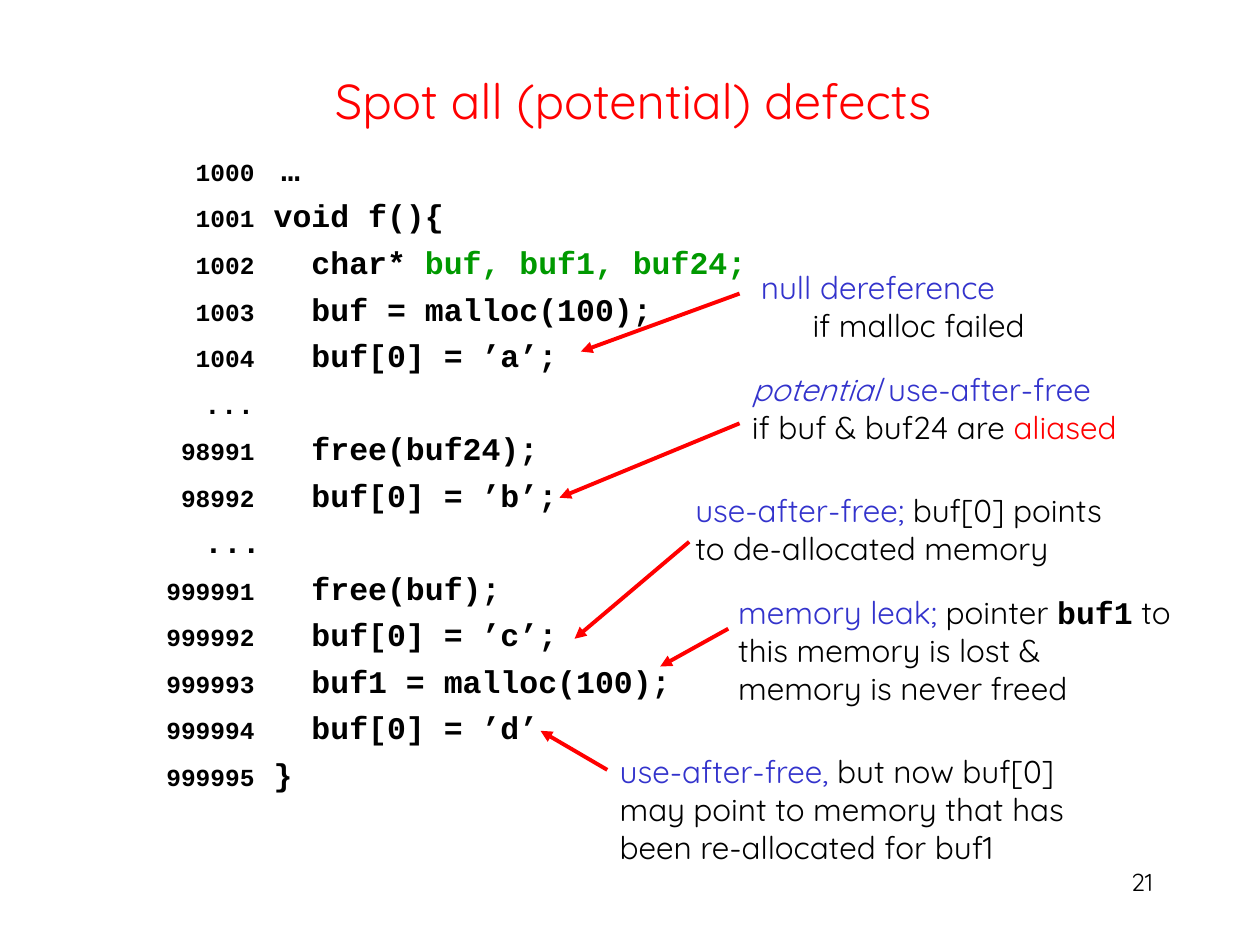
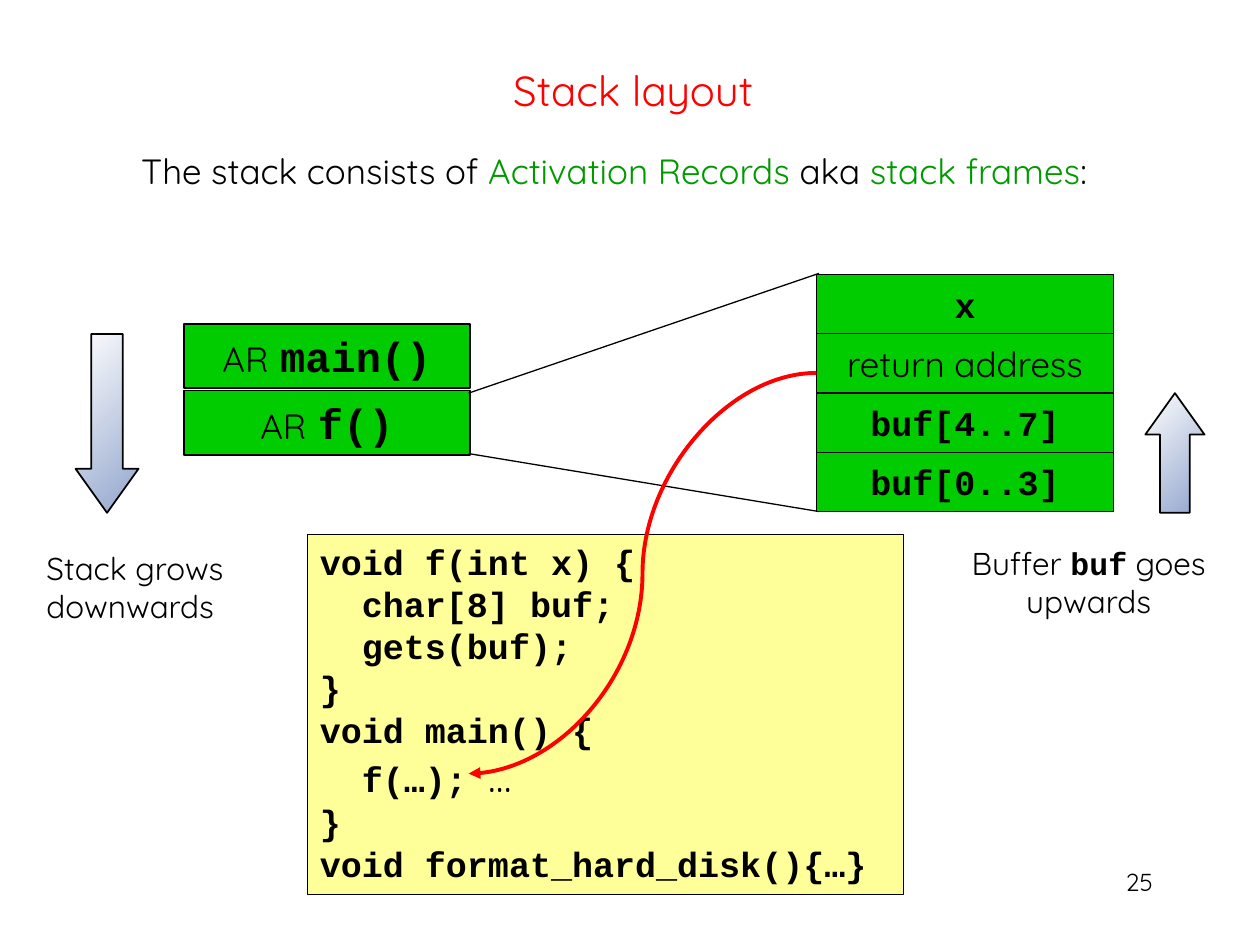
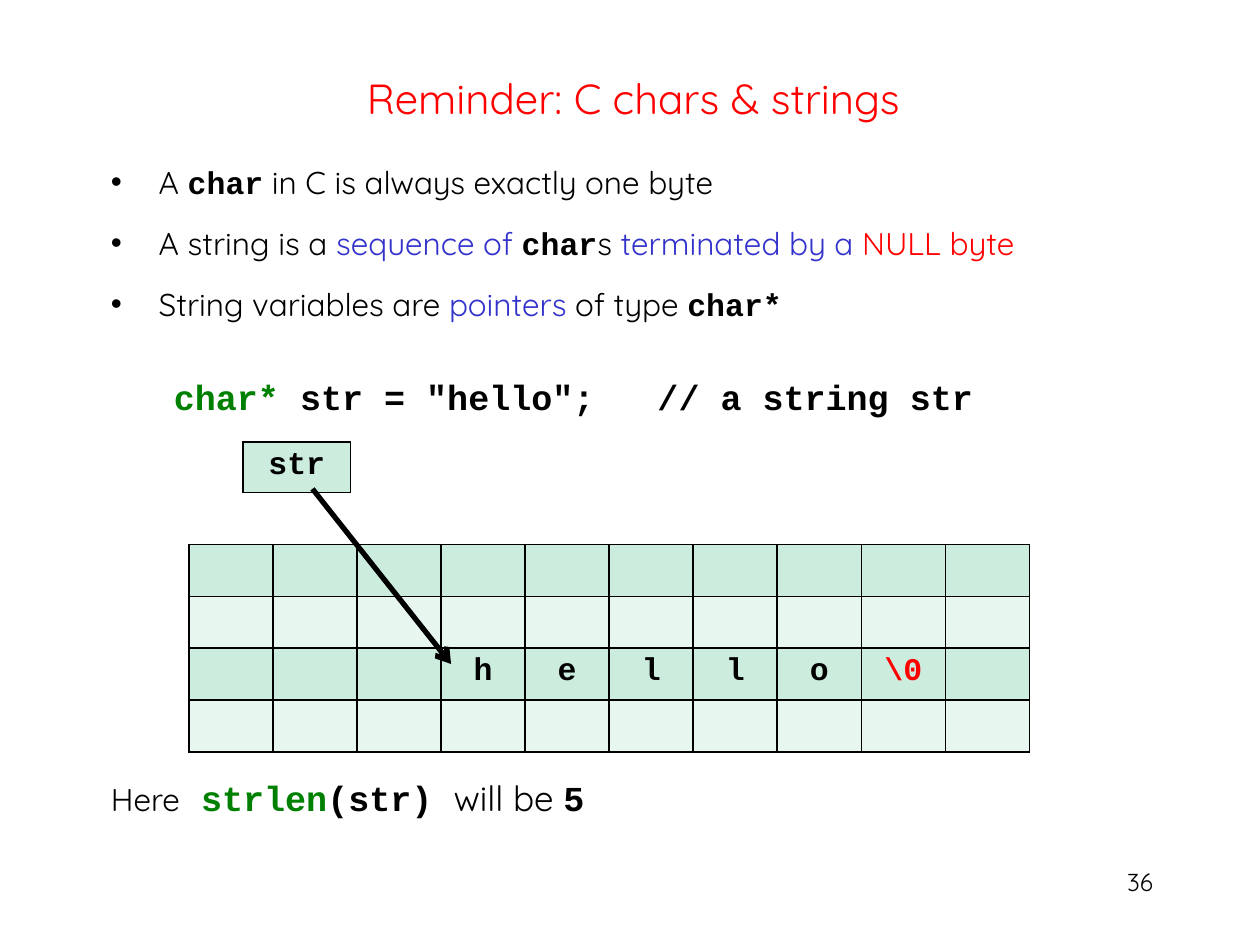
from lxml import etree
from pptx import Presentation
from pptx import util as u
from pptx.dml.color import RGBColor
from pptx.enum import shapes, text
from pptx.oxml import ns

# Shared look
PROSE, CODE = "Quicksand", "Courier New"
BLACK, RED, BLUE, GREEN = "000000", "FF0000", "3333CC", "009900"
KEYWORD, FRAME, PAPER = "008000", "00CC00", "FFFF99"
CELL_DARK, CELL_LIGHT = "CCECDE", "E7F6EF"
GRADIENT = ("91A5CD", "FEFEFE")
LEFT, CENTER, RIGHT = (text.PP_ALIGN.LEFT, text.PP_ALIGN.CENTER,
                       text.PP_ALIGN.RIGHT)
TITLE_AREA = (7.8, 2.9, 84.9, 8.4)
BODY_AREA = (7.8, 11.4, 84.9, 54.7)
NUMBER_AREA = (71.7, 68.3, 20.8, 4.9)


def grid(*cells):
    """Lengths on a grid of 100 columns and 75 rows over the slide."""
    return [u.Inches(cell / 10) for cell in cells]


def rgb(color):
    return RGBColor.from_string(color)


# Text: a paragraph is a list of runs, each made by prose() or code()
def prose(content, color=BLACK, size=18, italic=False):
    return dict(content=content, color=color, size=size, italic=italic)


def code(content, color=BLACK, size=18):
    return dict(content=content, color=color, size=size, font=CODE, bold=True)


def add_run(paragraph, content, *, size, color, font=PROSE, bold=False,
            italic=False):
    run = paragraph.add_run()
    run.text = content
    run.font.name, run.font.size = font, u.Pt(size)
    run.font.bold, run.font.italic = bold, italic
    run.font.color.rgb = rgb(color)


def write(paragraph, runs, *, align=LEFT, spacing=1.0, before=0, indent=0,
          bullet=None):
    paragraph.alignment = align
    paragraph.line_spacing = spacing
    paragraph.space_before = u.Pt(before)
    properties = paragraph._p.get_or_add_pPr()
    properties.set("marL", str(grid(indent)[0]))
    properties.set("indent", str(-grid(indent)[0] if bullet else 0))
    if bullet:
        etree.SubElement(properties, ns.qn("a:buFont"), typeface="Arial")
        etree.SubElement(properties, ns.qn("a:buChar"), char=bullet)
    else:
        etree.SubElement(properties, ns.qn("a:buNone"))
    for run in runs:
        add_run(paragraph, **run)


def fill_frame(frame, paragraphs, **layout):
    """Each paragraph is a list of runs, or a pair of runs and its layout."""
    for index, entry in enumerate(paragraphs):
        runs, own = entry if isinstance(entry, tuple) else (entry, {})
        paragraph = frame.add_paragraph() if index else frame.paragraphs[0]
        write(paragraph, runs, **{**layout, **own})


# Slide elements
def place(shape, area):
    shape.left, shape.top, shape.width, shape.height = grid(*area)


def add_textbox(slide, area, paragraphs, **layout):
    box = slide.shapes.add_textbox(*grid(*area))
    box.text_frame.word_wrap = True
    fill_frame(box.text_frame, paragraphs, **layout)


def add_page(presentation, title, number, size=24, spacing=1.34):
    slide = presentation.slides.add_slide(presentation.slide_layouts[1])
    heading = slide.shapes.title
    place(heading, TITLE_AREA)
    heading.text_frame.auto_size = text.MSO_AUTO_SIZE.NONE
    heading.text_frame.vertical_anchor = text.MSO_ANCHOR.MIDDLE
    fill_frame(heading.text_frame, [[prose(title, RED, size)]],
               align=CENTER, spacing=spacing)
    add_textbox(slide, NUMBER_AREA, [[prose(str(number), size=14)]],
                align=RIGHT)
    return slide


def fill_body(slide, paragraphs, area=BODY_AREA, **layout):
    body = slide.placeholders[1]
    place(body, area)
    body.text_frame.auto_size = text.MSO_AUTO_SIZE.NONE
    fill_frame(body.text_frame, paragraphs, **layout)


def add_line(slide, start, end, color=BLACK, width=0.75, head=None,
             kind=shapes.MSO_CONNECTOR.STRAIGHT):
    connector = slide.shapes.add_connector(kind, *grid(*start, *end))
    connector.line.color.rgb = rgb(color)
    connector.line.width = u.Pt(width)
    if head:
        etree.SubElement(connector.line._get_or_add_ln(),
                         ns.qn("a:tailEnd"), type=head)
    etree.SubElement(connector._element.spPr, ns.qn("a:effectLst"))


def add_outlined(slide, kind, area, line_width):
    shape = slide.shapes.add_shape(kind, *grid(*area))
    shape.shadow.inherit = False
    shape.line.color.rgb = rgb(BLACK)
    shape.line.width = u.Pt(line_width)
    return shape


def add_box(slide, area, paragraphs, color=FRAME, line_width=0.75,
            align=CENTER, anchor=text.MSO_ANCHOR.MIDDLE, wrap=False):
    box = add_outlined(slide, shapes.MSO_SHAPE.RECTANGLE, area, line_width)
    box.fill.solid()
    box.fill.fore_color.rgb = rgb(color)
    box.text_frame.word_wrap = wrap
    box.text_frame.vertical_anchor = anchor
    fill_frame(box.text_frame, paragraphs, align=align)


def add_block_arrow(slide, kind, area):
    arrow = add_outlined(slide, kind, area, 1)
    arrow.adjustments[0], arrow.adjustments[1] = 0.5, 0.7
    arrow.fill.gradient()
    arrow.fill.gradient_angle = 135
    for stop, color in zip(arrow.fill.gradient_stops, GRADIENT):
        stop.color.rgb = rgb(color)


def add_border(cell):
    properties = cell._tc.get_or_add_tcPr()
    for side in ("lnL", "lnR", "lnT", "lnB"):
        line = etree.SubElement(properties, ns.qn(f"a:{side}"),
                                w=str(u.Pt(1)))
        fill = etree.SubElement(line, ns.qn("a:solidFill"))
        etree.SubElement(fill, ns.qn("a:srgbClr"), val=BLACK)


def add_memory(slide, area, rows, columns, contents):
    """A table of bytes; contents maps (row, column) to a run."""
    table = slide.shapes.add_table(rows, columns, *grid(*area)).table
    table.first_row = table.horz_banding = False
    for row in range(rows):
        for column in range(columns):
            cell = table.cell(row, column)
            add_border(cell)
            cell.fill.solid()
            cell.fill.fore_color.rgb = rgb(
                CELL_LIGHT if row % 2 else CELL_DARK)
            if (row, column) in contents:
                write(cell.text_frame.paragraphs[0],
                      [contents[row, column]], align=CENTER)


# Slides
def numbered(number, *parts):
    return [code(f"{number:>6}", size=14), *parts]


def build_defects(presentation):
    slide = add_page(presentation, "Spot all (potential) defects", 21, size=28)
    listing = [
        numbered(1000, code(" ", size=11), code(" ", size=14), code("…")),
        numbered(1001, code(" void f(){")),
        numbered(1002, code("   char* "), code("buf, buf1, buf24;", GREEN)),
        numbered(1003, code("   buf = malloc(100);")),
        numbered(1004, code("   buf[0] = ’a’;")),
        [code("  "), code("...", size=16)],
        numbered(98991, code("   free(buf24);")),
        numbered(98992, code("   buf[0] = ’b’;")),
        [code("  ...")],
        numbered(999991, code("   free(buf);")),
        numbered(999992, code("   buf[0] = ’c’;")),
        numbered(999993, code("   buf1 = malloc(100);")),
        numbered(999994, code("   buf[0] = ’d’")),
        numbered(999995, code(" }")),
    ]
    fill_body(slide, listing, (12.2, 11.4, 50.9, 54.7), before=5)

    # Remarks, each with the arrow to its line of code
    remarks = [
        ((59.4, 20.8, 33.9, 7.1), (58.7, 23.3), (46.1, 27.9),
         [[prose("null dereference", BLUE)],
          ([prose("if malloc failed")], dict(indent=4.1))]),
        ((58.7, 28.9, 34.7, 7.1), (58.7, 33.6), (44.4, 39.5),
         [[prose("potential", BLUE, italic=True),
           prose(" use-after-free", BLUE)],
          [prose("if buf & buf24 are "), prose("aliased", RED)]]),
        ((54.2, 38.5, 36.4, 7.1), (54.7, 43), (45.6, 50.7),
         [[prose("use-after-free; ", BLUE),
           prose("buf[0] points to de-allocated memory")]]),
        ((57.6, 46.6, 36.4, 10.1), (57.8, 49.9), (52.4, 52.9),
         [[prose("memory leak; ", BLUE), prose("pointer "), code("buf1"),
           prose(" to this memory is lost & memory is never freed")]]),
        ((48.2, 59.2, 38.9, 10.1), (48.2, 61.1), (42.9, 58),
         [[prose("use-after-free, ", BLUE),
           prose("but now buf[0] may point to memory that has been "
                 "re-allocated for buf1")]]),
    ]
    for area, start, end, paragraphs in remarks:
        add_textbox(slide, area, paragraphs)
        add_line(slide, start, end, RED, 2.25, "triangle")


def build_stack(presentation):
    slide = add_page(presentation, "Stack layout", 25, spacing=1.0)
    fill_body(slide, [[
        prose("The stack consists of ", size=20),
        prose("Activation Records ", GREEN, 20), prose("aka", size=20),
        prose(" stack frames", GREEN, 20), prose(":", size=20),
    ]], before=6, indent=2.4)

    # Activation records, and the second one enlarged
    for index, function in enumerate(("main()", "f()")):
        add_box(slide, (14.6, 25.7 + 5.3 * index, 22.7, 5.1),
                [[prose("AR", size=20), prose(" ", size=24),
                  code(function, size=24)]], line_width=1)
    add_line(slide, (37.2, 31.2), (65, 21.7))
    add_line(slide, (37.2, 36), (65, 40.6))
    fields = [code("x", size=20), prose("return address", size=20),
              code("buf[4..7]", size=20), code("buf[0..3]", size=20)]
    for index, field in enumerate(fields):
        add_box(slide, (64.8, 21.8 + 4.7 * index, 23.6, 4.7), [[field]])

    # Directions of growth
    add_block_arrow(slide, shapes.MSO_SHAPE.DOWN_ARROW, (6, 26.5, 5, 14.2))
    add_textbox(slide, (2.7, 43.1, 17.1, 7.1),
                [[prose("Stack grows")], [prose("downwards")]])
    add_block_arrow(slide, shapes.MSO_SHAPE.UP_ARROW, (90.9, 31.2, 4.7, 9.5))
    add_textbox(slide, (75.7, 42.7, 21.4, 7.1),
                [[prose("Buffer "), code("buf"), prose(" goes")],
                 [prose("upwards")]], align=CENTER)

    # Program, and where the return address points
    program = [[code(line, size=20)] for line in (
        "void f(int x) {", "  char[8] buf;", "  gets(buf);", "}",
        "void main() {", "  f(…); ", "}", "void format_hard_disk(){…}")]
    program[5].append(prose("…", size=24))
    add_box(slide, (24.4, 42.4, 47.3, 28.6), program, PAPER, align=LEFT,
            anchor=text.MSO_ANCHOR.TOP, wrap=True)
    add_line(slide, (64.8, 29.6), (37.2, 61.4), RED, 2.25, "triangle",
             shapes.MSO_CONNECTOR.CURVE)


def build_strings(presentation):
    slide = add_page(presentation, "Reminder: C chars & strings", 36)
    bullets = [
        [prose("A "), code("char"), prose(" in C is always exactly one byte")],
        [prose("A string is a "), prose("sequence of ", BLUE), code("char"),
         prose("s "), prose("terminated by a ", BLUE),
         prose("NULL byte", RED)],
        [prose("String variables are "), prose("pointers ", BLUE),
         prose("of type "), code("char*")],
    ]
    declaration = [code("char* ", KEYWORD, 20),
                   code('str = "hello";   // a string str', size=20)]
    result = [prose("Here"), code(" strlen", KEYWORD, 20),
              code("(str) ", size=20), prose("will be ", size=20),
              code("5", size=20)]
    fill_body(slide, [
        *((runs, dict(bullet="•", indent=3.8)) for runs in bullets),
        (declaration, dict(spacing=2.0, indent=5)),
        (result, dict(before=197)),
    ], spacing=1.34, before=6)

    # The pointer and the memory it points to
    add_memory(slide, (19.3, 35.1, 8.5, 4), 1, 1, {(0, 0): code("str")})
    letters = {(2, 3 + index): code(letter)
               for index, letter in enumerate("hello")}
    letters[2, 8] = code("\\0", RED)
    add_memory(slide, (15, 43.2, 66.7, 16.5), 4, 10, letters)
    add_line(slide, (24.8, 38.8), (35.8, 52.7), width=3, head="arrow")


def main():
    presentation = Presentation()
    presentation.slide_width, presentation.slide_height = grid(100, 75)
    build_defects(presentation)
    build_stack(presentation)
    build_strings(presentation)
    presentation.save("out.pptx")


if __name__ == "__main__":
    main()
